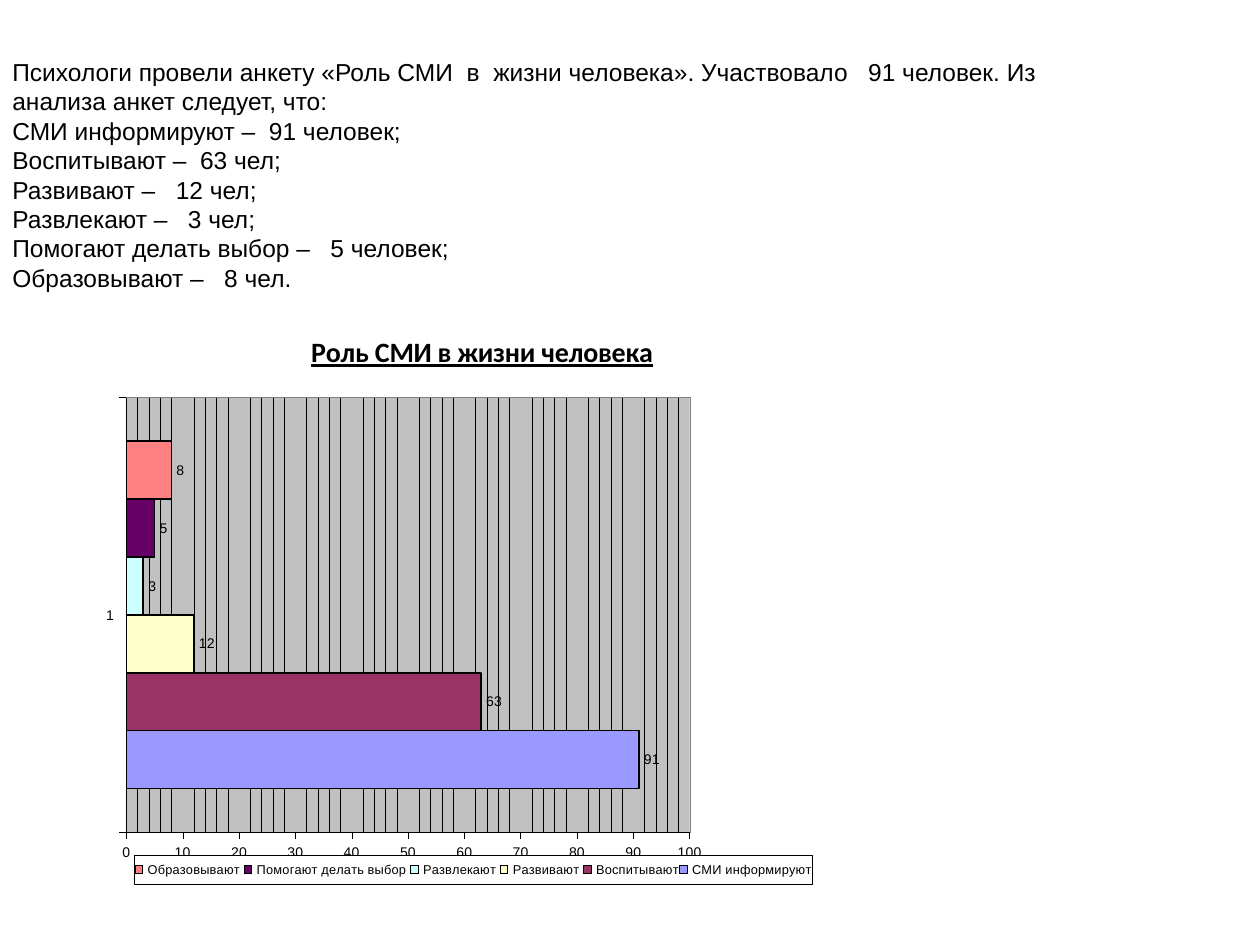
from lxml import etree
from pptx import Presentation
from pptx.chart.data import CategoryChartData
from pptx.dml.color import RGBColor
from pptx.enum.chart import XL_CHART_TYPE, XL_LABEL_POSITION, XL_LEGEND_POSITION, XL_TICK_MARK
from pptx.enum.text import MSO_ANCHOR, MSO_AUTO_SIZE
from pptx.oxml import parse_xml
from pptx.oxml.ns import nsdecls, qn
from pptx.util import Inches, Pt

BAR = XL_CHART_TYPE.BAR_CLUSTERED
LABEL_END = XL_LABEL_POSITION.OUTSIDE_END
LEGEND_BOTTOM = XL_LEGEND_POSITION.BOTTOM
TICK_OUT = XL_TICK_MARK.OUTSIDE
MIDDLE = MSO_ANCHOR.MIDDLE
GROW = MSO_AUTO_SIZE.SHAPE_TO_FIT_TEXT

COLORS = {
    "black": "000000", "white": "FFFFFF", "plot": "C0C0C0", "plot_edge": "808080",
    "inform": "9999FF", "educate": "993366", "develop": "FFFFCC",
    "entertain": "CCFFFF", "choose": "660066", "teach": "FF8080",
}

SURVEY_LINES = [
    "Психологи провели анкету «Роль СМИ  в  жизни человека». "
    "Участвовало   91 человек. Из анализа анкет следует, что:",
    "СМИ информируют –  91 человек;",
    "Воспитывают –  63 чел;",
    "Развивают –   12 чел;",
    "Развлекают –   3 чел;",
    "Помогают делать выбор –   5 человек;",
    "Образовывают –   8 чел.",
]

# Series name, number of people, colour
ROLES = [
    ("СМИ информируют", 91, "inform"),
    ("Воспитывают", 63, "educate"),
    ("Развивают ", 12, "develop"),
    ("Развлекают ", 3, "entertain"),
    ("Помогают делать выбор ", 5, "choose"),
    ("Образовывают ", 8, "teach"),
]


def rgb(name):
    return RGBColor.from_string(COLORS[name])


def set_font(font, size, name="Arial", **extra):
    for attribute, value in {"name": name, "size": Pt(size), "bold": False, **extra}.items():
        setattr(font, attribute, value)
    font.color.rgb = rgb("black")


def set_line(line, width):
    line.color.rgb = rgb("black")
    line.width = Pt(width)


def set_layout(part, index, inner=False, **places):
    """Place a chart part by fractions of the chart area."""
    for old in part.findall(qn("c:layout")):
        part.remove(old)
    layout = parse_xml(f"<c:layout {nsdecls('c')}><c:manualLayout/></c:layout>")
    values = {"layoutTarget": "inner"} if inner else {}
    values.update({"xMode": "edge", "yMode": "edge"}, **places)
    for tag, value in values.items():
        etree.SubElement(layout[0], qn(f"c:{tag}")).set("val", str(value))
    part.insert(index, layout)


def thin_format(edge, fill=None):
    """Shape properties with a hairline edge and an optional fill."""
    def solid(name):
        return f'<a:solidFill><a:srgbClr val="{COLORS[name]}"/></a:solidFill>'

    return parse_xml(
        f"<c:spPr {nsdecls('c', 'a')}>{solid(fill) if fill else ''}"
        f'<a:ln w="{Pt(0.25)}">{solid(edge)}</a:ln></c:spPr>')


def add_survey_text(slide):
    frame = slide.shapes.add_textbox(
        Inches(0), Inches(0.39), Inches(8.83), Inches(1.99)).text_frame
    settings = {"word_wrap": True, "auto_size": GROW, "vertical_anchor": MIDDLE}
    for attribute, value in settings.items():
        setattr(frame, attribute, value)
    for number, line in enumerate(SURVEY_LINES):
        paragraph = frame.paragraphs[0] if number == 0 else frame.add_paragraph()
        run = paragraph.add_run()
        run.text = line
        set_font(run.font, 14)


def format_title(chart):
    chart.has_title = True
    run = chart.chart_title.text_frame.paragraphs[0].add_run()
    run.text = "Роль СМИ в жизни человека"
    set_font(run.font, 16, "Calibri", bold=True, underline=True)
    set_layout(chart.chart_title._element, 1, x=0.29, y=0.04)


def format_axes(chart):
    scale = {"minimum_scale": 0, "maximum_scale": 100, "major_unit": 10, "minor_unit": 2,
             "has_major_gridlines": False, "has_minor_gridlines": True}
    for attribute, value in scale.items():
        setattr(chart.value_axis, attribute, value)
    gridlines = chart.value_axis._element.find(qn("c:minorGridlines"))
    gridlines.append(thin_format("black"))
    for axis in (chart.category_axis, chart.value_axis):
        axis.major_tick_mark = TICK_OUT
        set_font(axis.tick_labels.font, 8)
        set_line(axis.format.line, 0.25)


def format_bars(plot):
    plot.gap_width = 150
    plot.overlap = 0
    plot.vary_by_categories = False
    for series, (_, _, color) in zip(plot.series, ROLES):
        series.format.fill.solid()
        series.format.fill.fore_color.rgb = rgb(color)
        set_line(series.format.line, 1)
        labels = series.data_labels
        labels.show_value = True
        labels.position = LABEL_END
        set_font(labels.font, 8)


def format_legend(chart):
    chart.has_legend = True
    legend = chart.legend
    legend.position = LEGEND_BOTTOM
    legend.include_in_layout = False
    set_font(legend.font, 7.3)
    element = legend._element
    set_layout(element, 1, x=0.08, y=0.95, w=0.83, h=0.05)
    element.find(qn("c:txPr")).addprevious(thin_format("black", "white"))


def add_role_chart(slide):
    data = CategoryChartData()
    data.categories = ["1"]
    for name, people, _ in ROLES:
        data.add_series(name, [people])
    chart = slide.shapes.add_chart(
        BAR, Inches(0.55), Inches(2.42), Inches(6.48), Inches(4.6), data).chart
    set_font(chart.font, 8)
    format_title(chart)
    format_axes(chart)
    format_bars(chart.plots[0])
    format_legend(chart)

    # Grey plot area
    plot_area = chart._chartSpace.chart.plotArea
    set_layout(plot_area, 0, inner=True, x=0.07, y=0.16, w=0.69, h=0.75)
    plot_area.append(thin_format("plot_edge", "plot"))


def main():
    presentation = Presentation()
    presentation.slide_width = Inches(10)
    presentation.slide_height = Inches(7.5)
    slide = presentation.slides.add_slide(presentation.slide_layouts[6])
    add_survey_text(slide)
    add_role_chart(slide)
    presentation.save("out.pptx")


if __name__ == "__main__":
    main()
